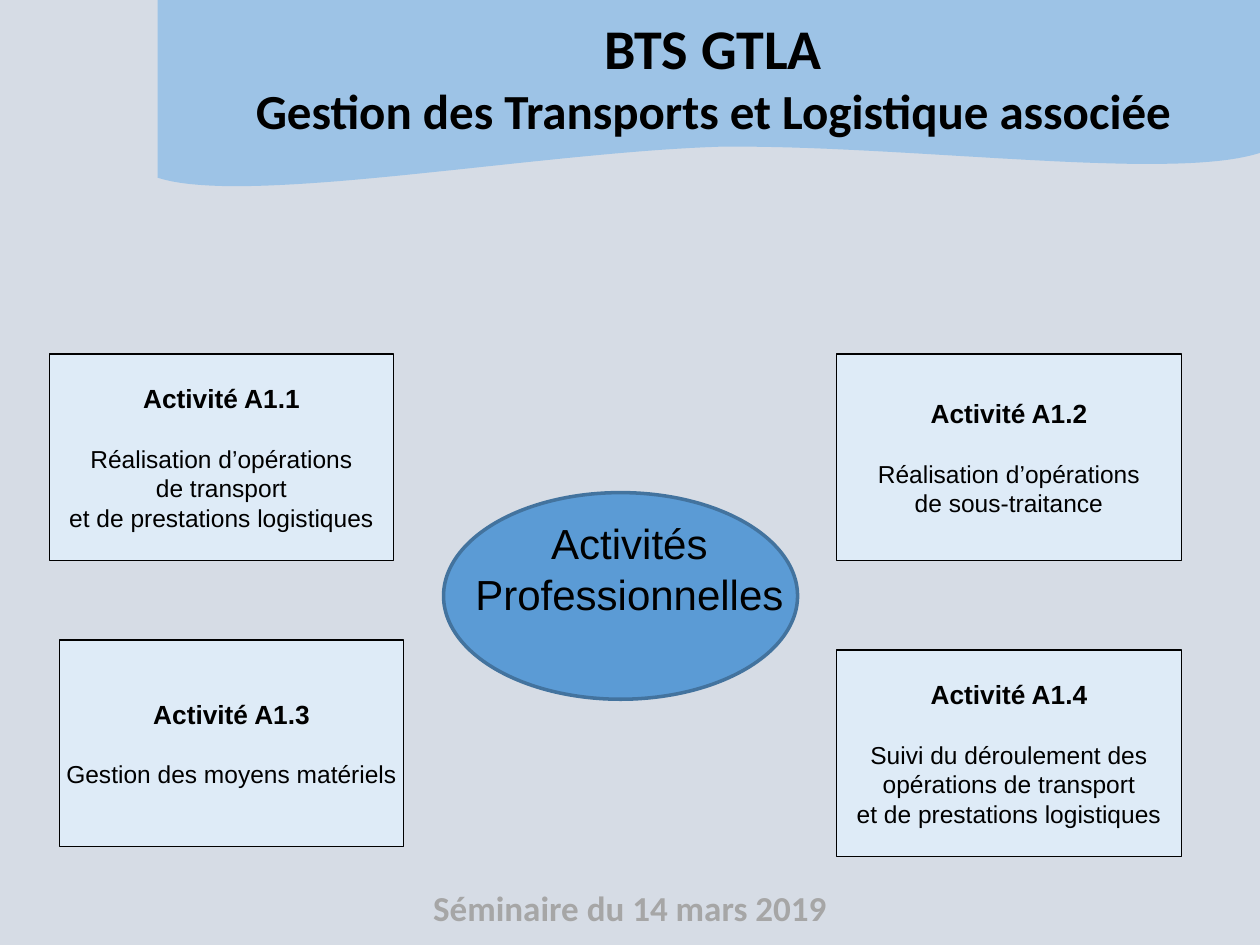
from dataclasses import dataclass

from pptx import Presentation
from pptx.dml.color import RGBColor
from pptx.enum.shapes import MSO_SHAPE
from pptx.enum.text import MSO_ANCHOR, MSO_AUTO_SIZE, PP_ALIGN
from pptx.util import Inches, Pt

RECTANGLE = MSO_SHAPE.RECTANGLE
OVAL = MSO_SHAPE.OVAL
MIDDLE = MSO_ANCHOR.MIDDLE
TOP = MSO_ANCHOR.TOP
FIT_SHAPE = MSO_AUTO_SIZE.SHAPE_TO_FIT_TEXT
CENTER = PP_ALIGN.CENTER

SLIDE_WIDTH, SLIDE_HEIGHT = Inches(10), Inches(7.5)
COLUMNS, ROWS = 100, 75
CURVE_STEPS = 40


@dataclass(frozen=True)
class Theme:
    background: str = "D6DCE5"
    banner: str = "9DC3E6"
    card: str = "DEEBF7"
    hub: str = "5B9BD5"
    hub_line: str = "43739E"
    text: str = "000000"
    footer: str = "A6A6A6"
    heading_font: str = "Calibri"
    body_font: str = "Arial"
    title_size: int = 32
    subtitle_size: int = 28
    hub_size: int = 24
    footer_size: int = 20
    card_title_size: int = 15
    card_body_size: int = 14
    card_gap: int = 17


@dataclass(frozen=True)
class Box:
    column: float
    row: float
    columns: float
    rows: float

    def lengths(self):
        across, down = SLIDE_WIDTH / COLUMNS, SLIDE_HEIGHT / ROWS
        return (
            round(self.column * across),
            round(self.row * down),
            round(self.columns * across),
            round(self.rows * down),
        )

    def point(self, share_x, share_y):
        left, top, width, height = self.lengths()
        return round(left + share_x * width), round(top + share_y * height)


THEME = Theme()
CARD_COLUMNS, CARD_ROWS = 27.35, 16.4
CARDS = [
    (3.9, 28.1, "Activité A1.1",
     ["Réalisation d’opérations", "de transport", "et de prestations logistiques"]),
    (66.4, 28.1, "Activité A1.2",
     ["Réalisation d’opérations", "de sous-traitance"]),
    (66.4, 51.6, "Activité A1.4",
     ["Suivi du déroulement des", "opérations de transport", "et de prestations logistiques"]),
    (4.7, 50.8, "Activité A1.3",
     ["Gestion des moyens matériels"]),
]
WAVE = [
    [(1, 0.74), (0.92, 0.88), (0.68, 0.7), (0.51, 0.71)],
    [(0.51, 0.71), (0.34, 0.74), (0.08, 1), (0, 0.86)],
]


def color(value):
    return RGBColor.from_string(value)


def write_lines(frame, lines, font_name, font_color):
    for index, (text, size, bold, gap) in enumerate(lines):
        paragraph = frame.paragraphs[0] if index == 0 else frame.add_paragraph()
        paragraph.alignment = CENTER
        if gap:
            paragraph.space_before = Pt(gap)
        run = paragraph.add_run()
        run.text = text
        run.font.name = font_name
        run.font.size = Pt(size)
        run.font.bold = bold
        run.font.color.rgb = color(font_color)


def add_label(slide, box, lines, font_name, font_color):
    frame = slide.shapes.add_textbox(*box.lengths()).text_frame
    frame.word_wrap = True
    frame.auto_size = FIT_SHAPE
    frame.vertical_anchor = TOP
    write_lines(frame, lines, font_name, font_color)


def add_panel(slide, preset, box, fill, line, line_width):
    shape = slide.shapes.add_shape(preset, *box.lengths())
    shape.shadow.inherit = False
    shape.fill.solid()
    shape.fill.fore_color.rgb = color(fill)
    shape.line.color.rgb = color(line)
    shape.line.width = Pt(line_width)
    return shape


def curve_points(controls):
    for step in range(1, CURVE_STEPS + 1):
        t = step / CURVE_STEPS
        weights = ((1 - t) ** 3, 3 * t * (1 - t) ** 2, 3 * t ** 2 * (1 - t), t ** 3)
        yield tuple(
            sum(weight * control[axis] for weight, control in zip(weights, controls))
            for axis in (0, 1)
        )


def add_banner(slide, box):
    outline = [(1, 0), WAVE[0][0]]
    for controls in WAVE:
        outline.extend(curve_points(controls))
    builder = slide.shapes.build_freeform(*box.point(0, 0))
    builder.add_line_segments([box.point(x, y) for x, y in outline], close=True)
    shape = builder.convert_to_shape()
    shape.shadow.inherit = False
    shape.fill.solid()
    shape.fill.fore_color.rgb = color(THEME.banner)
    shape.line.fill.background()


def add_title(slide, box):
    lines = [
        ("BTS GTLA", THEME.title_size, True, 0),
        ("Gestion des Transports et Logistique associée", THEME.subtitle_size, True, 0),
    ]
    add_label(slide, box, lines, THEME.heading_font, THEME.text)


def add_footer(slide, box):
    lines = [("Séminaire du 14 mars 2019", THEME.footer_size, True, 0)]
    add_label(slide, box, lines, THEME.heading_font, THEME.footer)


def add_card(slide, box, title, body):
    frame = add_panel(slide, RECTANGLE, box, THEME.card, THEME.text, 0.75).text_frame
    frame.word_wrap = False
    frame.vertical_anchor = MIDDLE
    lines = [(title, THEME.card_title_size, True, 0)]
    for index, text in enumerate(body):
        gap = THEME.card_gap if index == 0 else 0
        lines.append((text, THEME.card_body_size, False, gap))
    write_lines(frame, lines, THEME.body_font, THEME.text)


def add_hub_label(slide, box):
    lines = [("Activités Professionnelles", THEME.hub_size, False, 0)]
    add_label(slide, box, lines, THEME.body_font, THEME.text)


def build_activities_slide(presentation):
    slide = presentation.slides.add_slide(presentation.slide_layouts[6])
    slide.background.fill.solid()
    slide.background.fill.fore_color.rgb = color(THEME.background)
    add_footer(slide, Box(25, 69.9, 50, 4.4))
    add_banner(slide, Box(12.5, 0, 87.5, 16.4))
    add_title(slide, Box(18.7, 0.6, 75.8, 11.1))
    add_panel(slide, OVAL, Box(35.2, 39.1, 28.1, 16.4), THEME.hub, THEME.hub_line, 2)
    for column, row, title, body in CARDS:
        add_card(slide, Box(column, row, CARD_COLUMNS, CARD_ROWS), title, body)
    add_hub_label(slide, Box(35.9, 40.6, 28.1, 9.1))


def main():
    presentation = Presentation()
    presentation.slide_width = SLIDE_WIDTH
    presentation.slide_height = SLIDE_HEIGHT
    build_activities_slide(presentation)
    presentation.save("out.pptx")


if __name__ == "__main__":
    main()
